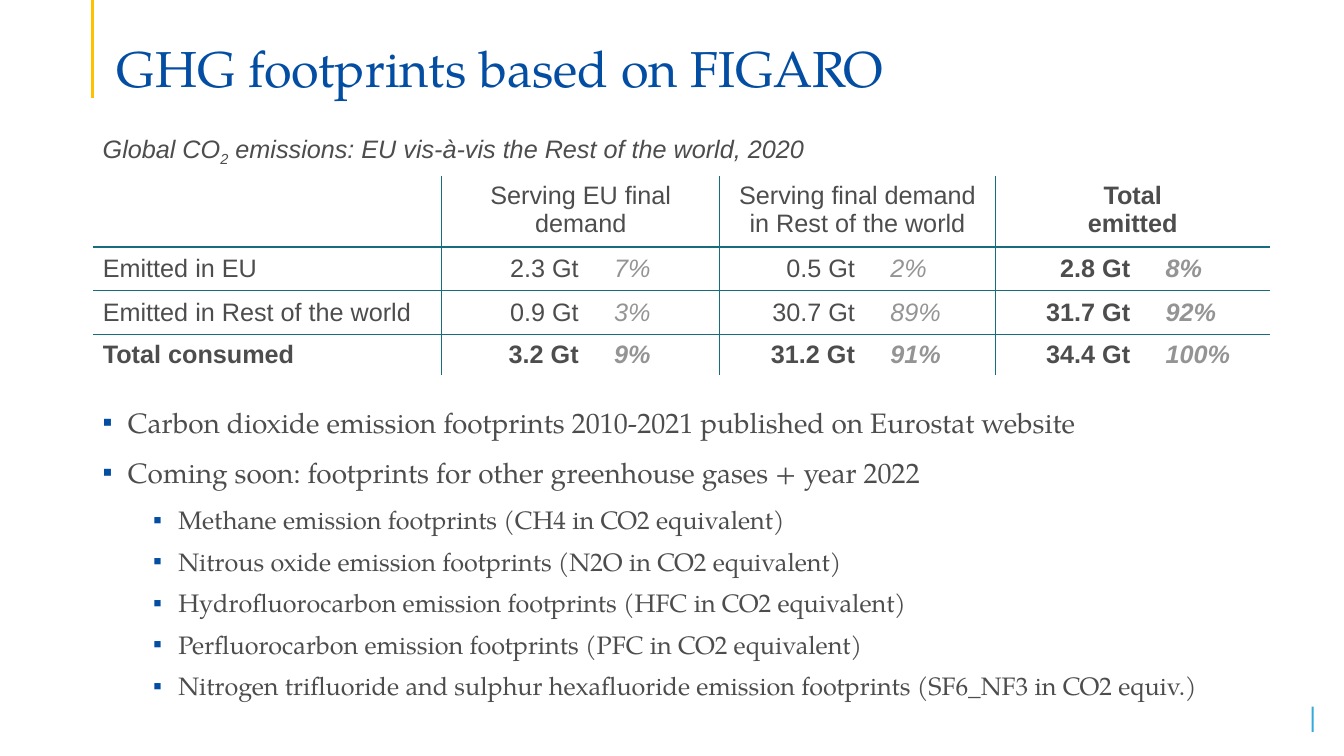
from dataclasses import dataclass
from typing import Any, Optional

from lxml.etree import SubElement
from pptx import Presentation
from pptx.dml.color import RGBColor
from pptx.enum.shapes import MSO_CONNECTOR, MSO_SHAPE
from pptx.enum.text import MSO_ANCHOR, PP_ALIGN
from pptx.oxml.ns import qn
from pptx.util import Inches, Pt

SERIF, SANS = "TeX Gyre Pagella", "Arial"
BLUE, GREY, LIGHT_GREY, TEAL = "034EA2", "4D4D4D", "949494", "176C7D"
YELLOW, SKY, WHITE = "FFC000", "32AADC", "FFFFFF"


@dataclass(frozen=True)
class Flow:
    amount: str
    share: str


@dataclass(frozen=True)
class EmissionRow:
    label: str
    height: float
    flows: tuple[Flow, ...]
    bold: bool = False


@dataclass(frozen=True)
class BulletLevel:
    size: float
    left: float
    before: float
    after: float


COLUMN_WIDTHS = (3.46, 2.76, 2.73, 2.73)
HEADER_HEIGHT = 0.66
HEADERS = (
    (),
    ("Serving EU final demand",),
    ("Serving final demand in Rest of the world",),
    ("Total", "emitted"),
)
ROWS = (
    EmissionRow("Emitted in EU", 0.43,
                (Flow("2.3 Gt", "7%"), Flow("0.5 Gt", "2%"), Flow("2.8 Gt", "8%"))),
    EmissionRow("Emitted in Rest of the world", 0.44,
                (Flow("0.9 Gt", "3%"), Flow("30.7 Gt", "89%"), Flow("31.7 Gt", "92%"))),
    EmissionRow("Total consumed", 0.39,
                (Flow("3.2 Gt", "9%"), Flow("31.2 Gt", "91%"), Flow("34.4 Gt", "100%")), True),
)
TOP_LEVEL = BulletLevel(20, 0.25, 0, 12)
LEAD_IN = BulletLevel(20, 0.25, 0, 6)
SUB_LEVEL = BulletLevel(18, 0.75, 5, 3)
BULLETS = (
    (TOP_LEVEL, "Carbon dioxide emission footprints 2010-2021 published on Eurostat website"),
    (LEAD_IN, "Coming soon: footprints for other greenhouse gases + year 2022"),
    (SUB_LEVEL, "Methane emission footprints (CH4 in CO2 equivalent)"),
    (SUB_LEVEL, "Nitrous oxide emission footprints (N2O in CO2 equivalent)"),
    (SUB_LEVEL, "Hydrofluorocarbon emission footprints (HFC in CO2 equivalent)"),
    (SUB_LEVEL, "Perfluorocarbon emission footprints (PFC in CO2 equivalent)"),
    (SUB_LEVEL, "Nitrogen trifluoride and sulphur hexafluoride emission footprints "
                "(SF6_NF3 in CO2 equiv.)"),
)


def color(value: str) -> RGBColor:
    return RGBColor.from_string(value)


def add_span(para: Any, text: str, *, size: float = 18, font: str = SANS, ink: str = GREY,
             bold: bool = False, italic: bool = False, baseline: int = 0) -> None:
    span = para.add_run()
    span.text = text
    span.font.size, span.font.name = Pt(size), font
    span.font.bold, span.font.italic = bold, italic
    span.font.color.rgb = color(ink)
    if baseline:
        span._r.get_or_add_rPr().set("baseline", str(baseline * 1000))


def add_box(page: Any, left: float, top: float, width: float, height: float) -> Any:
    box = page.shapes.add_textbox(Inches(left), Inches(top), Inches(width), Inches(height))
    box.text_frame.word_wrap = True
    return box.text_frame


def next_para(frame: Any, index: int) -> Any:
    return frame.paragraphs[0] if index == 0 else frame.add_paragraph()


def add_bullet(para: Any, level: BulletLevel) -> None:
    para.space_before, para.space_after = Pt(level.before), Pt(level.after)
    properties = para._p.get_or_add_pPr()
    properties.set("marL", str(Inches(level.left)))
    properties.set("indent", str(Inches(-0.25)))
    ink = SubElement(properties, qn("a:buClr"))
    SubElement(ink, qn("a:srgbClr"), val=BLUE)
    SubElement(properties, qn("a:buFont"), typeface=SANS)
    SubElement(properties, qn("a:buChar"), char="▪")


def add_tabs(para: Any, *stops: tuple[float, str]) -> None:
    tabs = SubElement(para._p.get_or_add_pPr(), qn("a:tabLst"))
    for position, alignment in stops:
        SubElement(tabs, qn("a:tab"), pos=str(Inches(position)), algn=alignment)


def style_cell(cell: Any, edges: dict[str, bool]) -> None:
    properties = cell._tc.get_or_add_tcPr()
    for side, visible in edges.items():
        line = SubElement(properties, qn(f"a:ln{side}"), w=str(Pt(1)))
        if visible:
            fill = SubElement(line, qn("a:solidFill"))
            SubElement(fill, qn("a:srgbClr"), val=TEAL)
        else:
            SubElement(line, qn("a:noFill"))
    cell.fill.solid()
    cell.fill.fore_color.rgb = color(WHITE)


def fill_flow(para: Any, flow: Flow, column_width: float, bold: bool) -> None:
    # Amounts end and shares start at fixed distances from the column's middle
    middle = column_width / 2 - 0.1
    add_tabs(para, (round(middle - 0.02, 2), "r"), (round(middle + 0.33, 2), "l"))
    add_span(para, f"\t{flow.amount}\t", bold=bold)
    add_span(para, flow.share, ink=LIGHT_GREY, bold=bold, italic=True)


def add_emissions_table(page: Any) -> None:
    heights = (HEADER_HEIGHT, *(row.height for row in ROWS))
    last_row, last_column = len(ROWS), len(COLUMN_WIDTHS) - 1
    table = page.shapes.add_table(
        len(heights), len(COLUMN_WIDTHS), Inches(0.92), Inches(1.75),
        Inches(sum(COLUMN_WIDTHS)), Inches(sum(heights))).table
    table.first_row = table.horz_banding = False
    for column, width in zip(table.columns, COLUMN_WIDTHS):
        column.width = Inches(width)
    for table_row, height in zip(table.rows, heights):
        table_row.height = Inches(height)

    # Inner grid lines only
    for r in range(len(heights)):
        for c in range(len(COLUMN_WIDTHS)):
            style_cell(table.cell(r, c), {"L": c > 0, "R": c < last_column,
                                          "T": r > 0, "B": r < last_row})

    for c, lines in enumerate(HEADERS):
        for index, text in enumerate(lines):
            para = next_para(table.cell(0, c).text_frame, index)
            para.alignment = PP_ALIGN.CENTER
            add_span(para, text, bold=c == last_column)

    for r, row in enumerate(ROWS, 1):
        label = table.cell(r, 0)
        label.vertical_anchor = MSO_ANCHOR.MIDDLE
        add_span(label.text_frame.paragraphs[0], row.label, bold=row.bold)
        for c, flow in enumerate(row.flows, 1):
            cell = table.cell(r, c)
            cell.vertical_anchor = MSO_ANCHOR.MIDDLE
            fill_flow(cell.text_frame.paragraphs[0], flow, COLUMN_WIDTHS[c],
                      row.bold or c == last_column)


def add_accents(page: Any) -> None:
    mark = page.shapes.add_shape(MSO_SHAPE.RECTANGLE, Inches(13.01), Inches(7.01),
                                 Inches(0.02), Inches(0.25))
    mark.shadow.inherit = False
    mark.fill.solid()
    mark.fill.fore_color.rgb = color(SKY)
    mark.line.fill.background()

    rule = page.shapes.add_connector(MSO_CONNECTOR.STRAIGHT, Inches(0.92), Inches(0),
                                     Inches(0.92), Inches(0.97))
    rule.line.color.rgb = color(YELLOW)
    rule.line.width = Pt(2.25)
    SubElement(rule._element.spPr, qn("a:effectLst"))


def main() -> None:
    deck = Presentation()
    deck.slide_width, deck.slide_height = Inches(13.33), Inches(7.5)
    page = deck.slides.add_slide(deck.slide_layouts[6])
    add_accents(page)

    # Title
    title = add_box(page, 1.06, 0.14, 11.67, 0.84)
    title.vertical_anchor, title.margin_bottom = MSO_ANCHOR.BOTTOM, Inches(0)
    title.paragraphs[0].line_spacing = 0.9
    add_span(title.paragraphs[0], "GHG footprints based on FIGARO", size=36, font=SERIF, ink=BLUE)

    # Table with its caption
    caption = add_box(page, 0.92, 1.27, 11.89, 0.48).paragraphs[0]
    add_span(caption, "Global CO", italic=True)
    add_span(caption, "2", italic=True, baseline=-25)
    add_span(caption, " emissions: EU vis-à-vis the Rest of the world, 2020", italic=True)
    add_emissions_table(page)

    # Bullets
    body = add_box(page, 0.92, 3.97, 12.14, 3.1)
    for index, (level, text) in enumerate(BULLETS):
        para = next_para(body, index)
        add_bullet(para, level)
        add_span(para, text, size=level.size, font=SERIF)

    deck.save("out.pptx")


if __name__ == "__main__":
    main()
